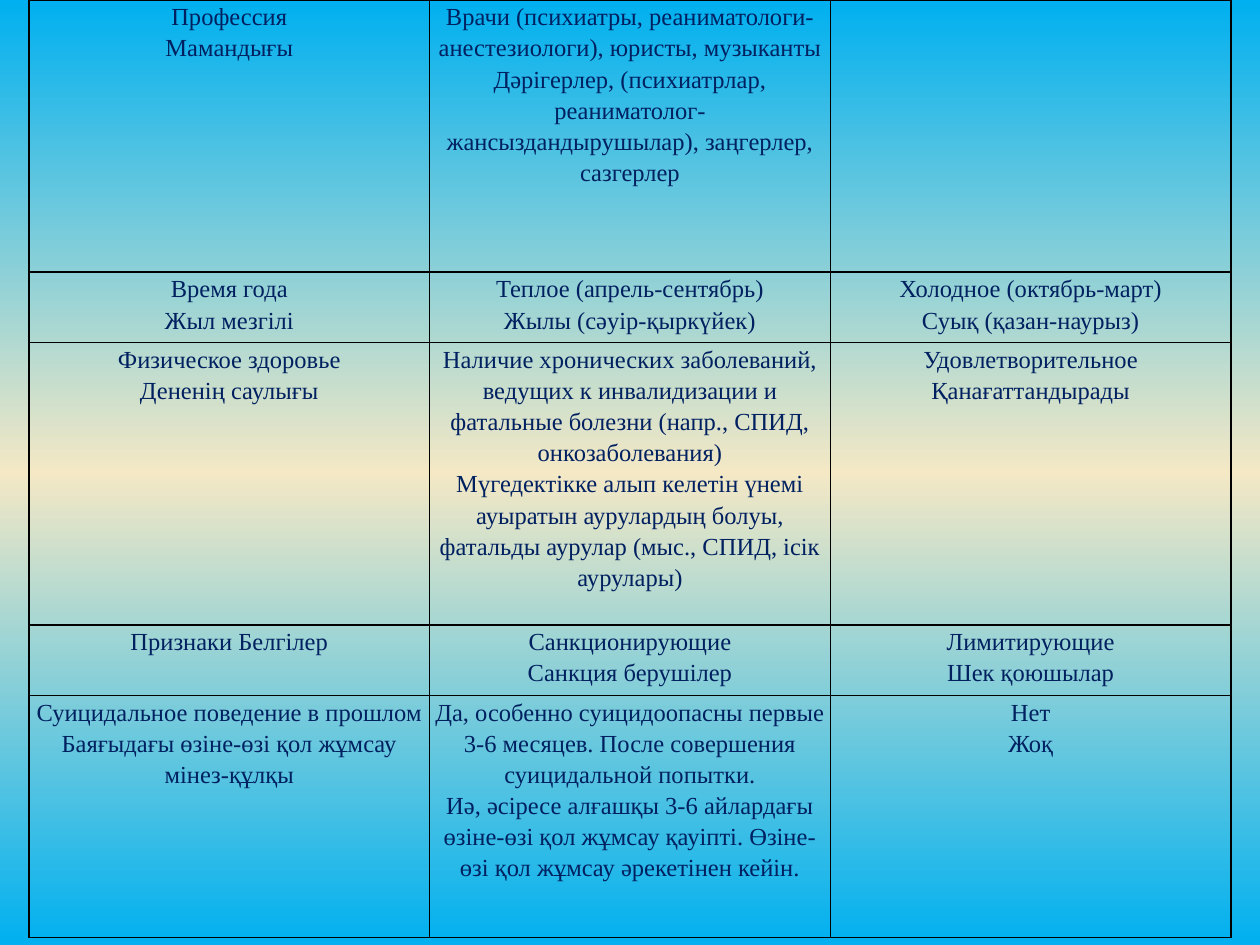
from copy import deepcopy
from dataclasses import dataclass

from lxml import etree
from pptx import Presentation
from pptx.dml.color import RGBColor
from pptx.enum.text import PP_ALIGN
from pptx.oxml.ns import qn
from pptx.util import Inches, Pt

CENTER = PP_ALIGN.CENTER


@dataclass(frozen=True)
class Theme:
    sky: str = "00B0F0"
    sand: str = "F4E8C5"
    text: str = "002060"
    border: str = "000000"
    font: str = "Times New Roman"
    size: int = 14
    border_width: int = 1
    line_spacing: float = 1.15


THEME = Theme()

# Each cell is a list of paragraphs: Russian, then Kazakh
ROWS = [
    (2.16, [
        ["Профессия", "Мамандығы"],
        ["Врачи (психиатры, реаниматологи-анестезиологи), юристы, музыканты",
         "Дәрігерлер, (психиатрлар, реаниматолог- жансыздандырушылар), заңгерлер, сазгерлер"],
        [],
    ]),
    (0.56, [
        ["Время года", "Жыл мезгілі"],
        ["Теплое (апрель-сентябрь)", "Жылы (сәуір-қыркүйек)"],
        ["Холодное (октябрь-март)", "Суық (қазан-наурыз)"],
    ]),
    (2.24, [
        ["Физическое здоровье", "Дененің саулығы"],
        ["Наличие хронических заболеваний, ведущих к инвалидизации и фатальные болезни "
         "(напр., СПИД, онкозаболевания)",
         "Мүгедектікке алып келетін үнемі ауыратын аурулардың болуы, фатальды аурулар "
         "(мыс., СПИД, ісік аурулары)"],
        ["Удовлетворительное", "Қанағаттандырады"],
    ]),
    (0.56, [
        ["Признаки Белгілер"],
        ["Санкционирующие", "Санкция берушілер"],
        ["Лимитирующие", "Шек қоюшылар"],
    ]),
    (1.92, [
        ["Суицидальное поведение в прошлом", "Баяғыдағы өзіне-өзі қол жұмсау мінез-құлқы"],
        ["Да, особенно суицидоопасны первые 3-6 месяцев. После совершения суицидальной попытки.",
         "Иә, әсіресе алғашқы 3-6 айлардағы өзіне-өзі қол жұмсау қауіпті. "
         "Өзіне-өзі қол жұмсау әрекетінен кейін."],
        ["Нет", "Жоқ"],
    ]),
]
COLUMN_COUNT = 3
COLUMN_WIDTH = 3.18


def add_borders(cell):
    properties = cell._tc.get_or_add_tcPr()
    for index, side in enumerate(("lnL", "lnR", "lnT", "lnB")):
        line = etree.Element(qn(f"a:{side}"), w=str(Pt(THEME.border_width)))
        fill = etree.SubElement(line, qn("a:solidFill"))
        etree.SubElement(fill, qn("a:srgbClr"), val=THEME.border)
        properties.insert(index, line)


def fill_text(cell, lines):
    frame = cell.text_frame
    for index, line in enumerate(lines):
        paragraph = frame.add_paragraph() if index else frame.paragraphs[0]
        paragraph.alignment = CENTER
        paragraph.line_spacing = THEME.line_spacing
        run = paragraph.add_run()
        run.text = line
        run.font.name = THEME.font
        run.font.size = Pt(THEME.size)
        run.font.color.rgb = RGBColor.from_string(THEME.text)


presentation = Presentation()
presentation.slide_width = Inches(10)
presentation.slide_height = Inches(7.5)
slide = presentation.slides.add_slide(presentation.slide_layouts[6])

# Background: vertical gradient, sky to sand and back
background = slide.background.fill
background.gradient()
background.gradient_angle = 270
stop_list = slide.element.find(f".//{qn('a:gsLst')}")
stop_list.append(deepcopy(stop_list[-1]))
for stop, position, color in zip(background.gradient_stops, (0, 0.5, 1),
                                 (THEME.sky, THEME.sand, THEME.sky)):
    stop.position = position
    stop.color.rgb = RGBColor.from_string(color)

# Table of risk factors
table = slide.shapes.add_table(
    len(ROWS), COLUMN_COUNT, Inches(0.23), Inches(0),
    Inches(COLUMN_WIDTH * COLUMN_COUNT), Inches(sum(height for height, _ in ROWS)),
).table
table.first_row = False
table.horz_banding = False
for column in table.columns:
    column.width = Inches(COLUMN_WIDTH)

for row, (height, texts) in zip(table.rows, ROWS):
    row.height = Inches(height)
    for cell, lines in zip(row.cells, texts):
        cell.margin_left = cell.margin_right = Inches(0.03)
        cell.margin_top = cell.margin_bottom = Inches(0)
        cell.fill.background()
        add_borders(cell)
        fill_text(cell, lines)

presentation.save("out.pptx")
